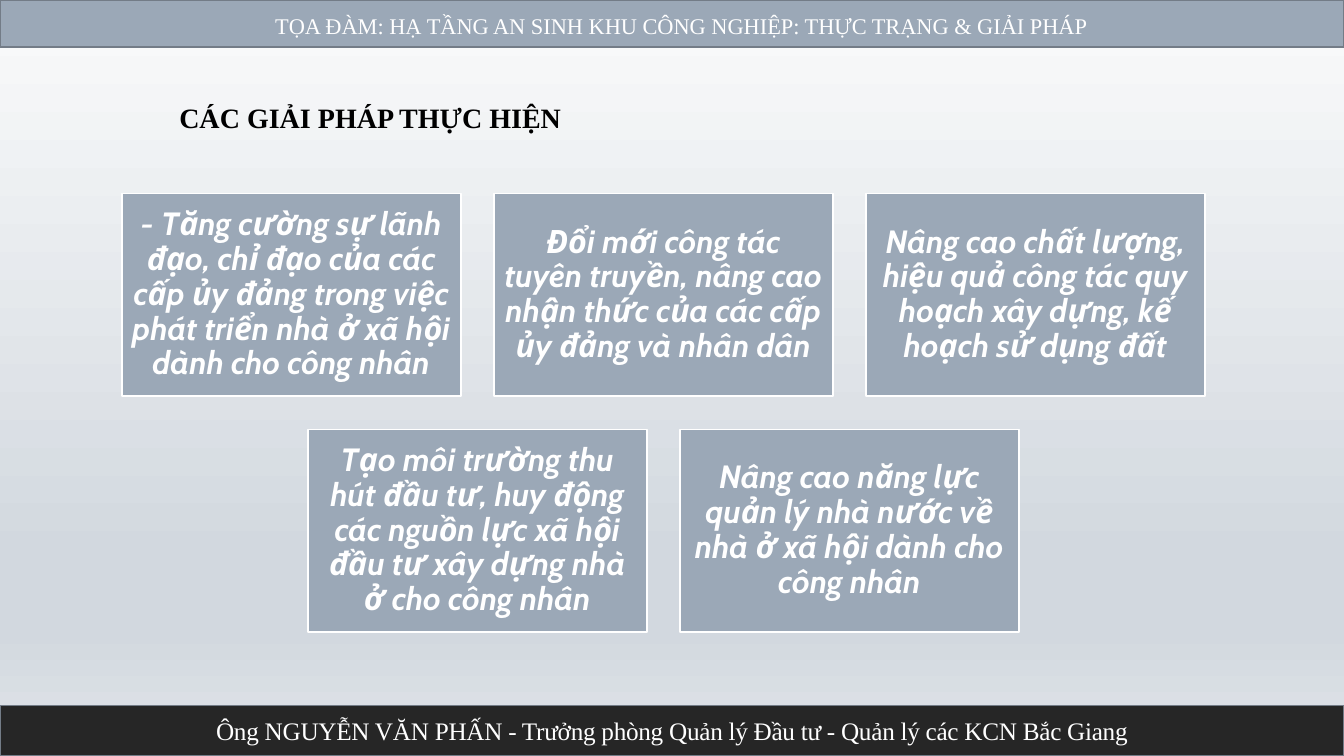
import pptx
import pptx.util
import pptx.dml.color
import pptx.enum.shapes
import pptx.enum.text
import pptx.oxml.ns
from lxml import etree

Inches = pptx.util.Inches
Pt = pptx.util.Pt
RGBColor = pptx.dml.color.RGBColor
Align = pptx.enum.text.PP_ALIGN
Anchor = pptx.enum.text.MSO_ANCHOR
qn = pptx.oxml.ns.qn

SEMINAR = "TỌA ĐÀM: HẠ TẦNG AN SINH KHU CÔNG NGHIỆP: THỰC TRẠNG & GIẢI PHÁP"
HEADING = "CÁC GIẢI PHÁP THỰC HIỆN"
SPEAKER = "Ông NGUYỄN VĂN PHẤN - Trưởng phòng Quản lý Đầu tư - Quản lý các KCN Bắc Giang"
SOLUTION_ROWS = [
    [
        "- Tăng cường sự lãnh đạo, chỉ đạo của các cấp ủy đảng trong việc phát triển nhà ở xã hội dành cho công nhân",
        "Đổi mới công tác tuyên truyền, nâng cao nhận thức của các cấp ủy đảng và nhân dân",
        "Nâng cao chất lượng, hiệu quả công tác quy hoạch xây dựng, kế hoạch sử dụng đất",
    ],
    [
        "Tạo môi trường thu hút đầu tư, huy động các nguồn lực xã hội đầu tư xây dựng nhà ở cho công nhân",
        "Nâng cao năng lực quản lý nhà nước về nhà ở xã hội dành cho công nhân",
    ],
]

WHITE = RGBColor(0xFF, 0xFF, 0xFF)
BLACK = RGBColor(0, 0, 0)
CHARCOAL = RGBColor(0x26, 0x26, 0x26)
STEEL = RGBColor(0x9B, 0xA8, 0xB7)
SLATE = RGBColor(0x73, 0x7C, 0x87)
BACKDROP = [
    (0, RGBColor(0xFA, 0xFB, 0xFB)),
    (74, RGBColor(0xD2, 0xD8, 0xDF)),
    (83, RGBColor(0xD2, 0xD8, 0xDF)),
    (100, RGBColor(0xE1, 0xE5, 0xE9)),
]

SLIDE_W, SLIDE_H = 13.33, 7.5
CARD_W, CARD_H, GAP = 3.36, 2.01, 0.33
CARDS_CENTER, CARDS_TOP = 6.58, 1.92


def add_text(slide, text, *, at, size, font="Times New Roman", color=WHITE, bold=False,
             italic=False, fill=None, line=None, align=Align.CENTER, anchor=Anchor.MIDDLE,
             inset=0.05, line_spacing=None, before=0, after=0, indent=0, tracking=0):
    box = [Inches(v) for v in at]
    if fill is None:
        holder = slide.shapes.add_textbox(*box)
    else:
        holder = slide.shapes.add_shape(pptx.enum.shapes.MSO_SHAPE.RECTANGLE, *box)
        holder.shadow.inherit = False
        holder.fill.solid()
        holder.fill.fore_color.rgb = fill
        holder.line.color.rgb = line
        holder.line.width = Pt(1.25)
    frame = holder.text_frame
    frame.word_wrap = True
    frame.vertical_anchor = anchor
    frame.margin_left = frame.margin_right = Inches(0.1)
    frame.margin_top = frame.margin_bottom = Inches(inset)
    paragraph = frame.paragraphs[0]
    paragraph.alignment = align
    paragraph.line_spacing = line_spacing
    paragraph.space_before = Pt(before)
    paragraph.space_after = Pt(after)
    if indent:
        paragraph._p.get_or_add_pPr().set("indent", str(Inches(indent)))
    run = paragraph.add_run()
    run.text = text
    run.font.name = font
    run.font.size = Pt(size)
    run.font.bold = bold
    run.font.italic = italic
    run.font.color.rgb = color
    if tracking:
        run._r.get_or_add_rPr().set("spc", str(round(tracking * 100)))


def paint_backdrop(slide):
    fill = slide.background.fill
    fill.gradient()
    fill.gradient_angle = 270
    stops = slide.element.find(".//" + qn("a:gsLst"))
    for stop in list(stops):
        stops.remove(stop)
    for percent, color in BACKDROP:
        stop = etree.SubElement(stops, qn("a:gs"), pos=str(percent * 1000))
        etree.SubElement(stop, qn("a:srgbClr"), val=str(color))


def main():
    deck = pptx.Presentation()
    deck.slide_width = Inches(SLIDE_W)
    deck.slide_height = Inches(SLIDE_H)
    slide = deck.slides.add_slide(deck.slide_layouts[6])
    paint_backdrop(slide)

    add_text(slide, SEMINAR, at=(0, 0, SLIDE_W, 0.47), size=16, fill=STEEL, line=SLATE,
             line_spacing=1.15, after=10, indent=0.19)
    add_text(slide, SPEAKER, at=(0, 7, SLIDE_W, 0.5), size=18, fill=CHARCOAL, line=SLATE,
             before=6, tracking=-0.2)
    add_text(slide, HEADING, at=(1.68, 0.95, 11.06, 0.44), size=20, color=BLACK, bold=True,
             align=Align.LEFT, anchor=Anchor.TOP)

    for row, solutions in enumerate(SOLUTION_ROWS):
        row_width = len(solutions) * (CARD_W + GAP) - GAP
        top = CARDS_TOP + row * (CARD_H + GAP)
        for column, solution in enumerate(solutions):
            left = CARDS_CENTER - row_width / 2 + column * (CARD_W + GAP)
            add_text(slide, solution, at=(left, top, CARD_W, CARD_H), size=23, font="Cabin",
                     bold=True, italic=True, fill=STEEL, line=WHITE, inset=0.1,
                     line_spacing=0.9)

    deck.save("out.pptx")


if __name__ == "__main__":
    main()
